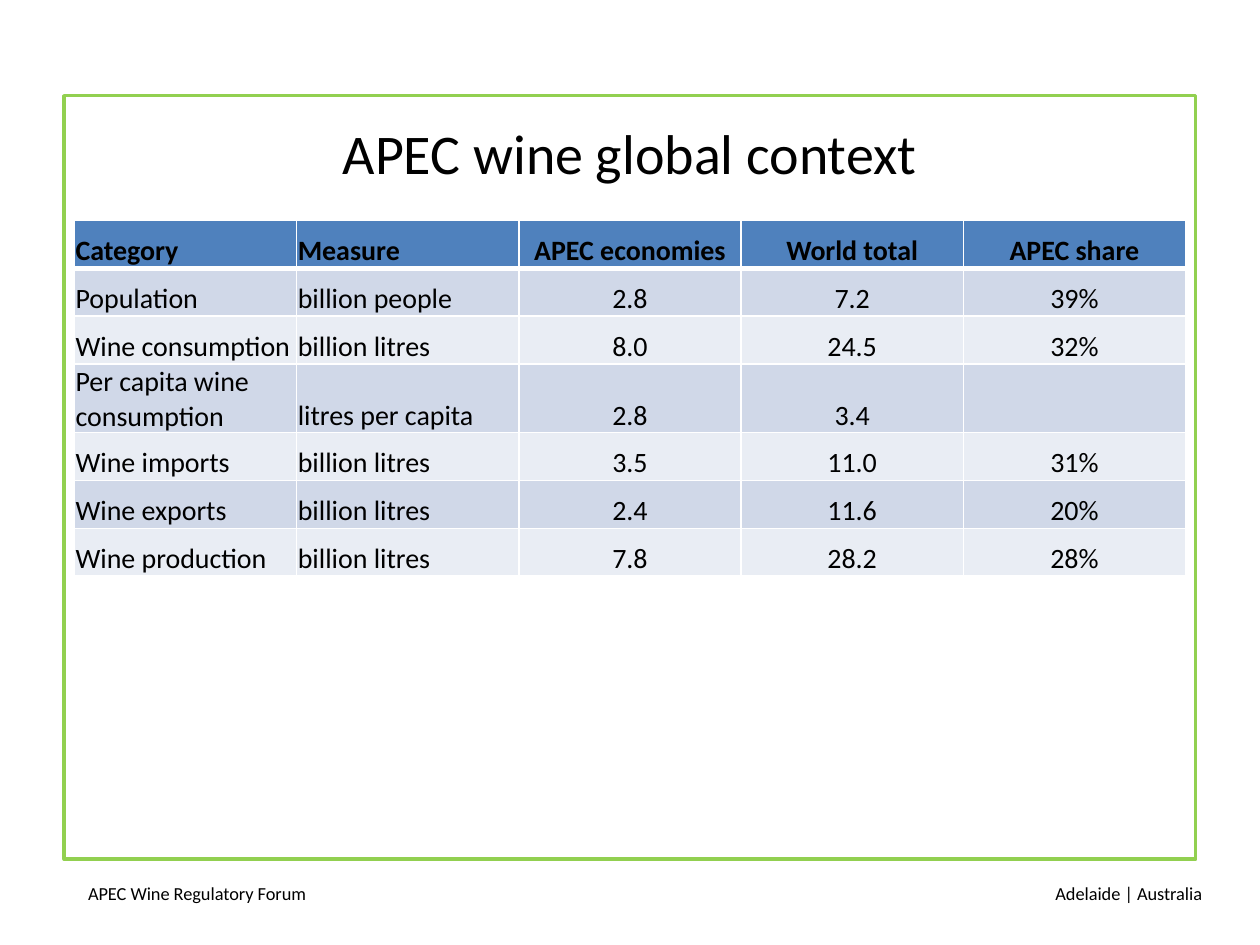
"""Build the APEC wine global context slide."""
from dataclasses import dataclass

from lxml import etree
from pptx import Presentation
from pptx import util as u
from pptx.dml.color import RGBColor
from pptx.enum import shapes, text
from pptx.oxml.ns import qn

TITLE = ("APEC wine global context", (0.5, 0.74, 9, 0.94))
FOOTERS = [
    ("APEC Wine Regulatory Forum", (0.6, 6.95, 2.35, 0.4), text.PP_ALIGN.LEFT),
    ("Adelaide | Australia", (7.29, 6.95, 2.35, 0.4), text.PP_ALIGN.RIGHT),
]
FRAME_BOX = (0.51, 0.76, 8.98, 6.06)
ROWS = [
    ("Category", "Measure", "APEC economies", "World total", "APEC share"),
    ("Population", "billion people", "2.8", "7.2", "39%"),
    ("Wine consumption", "billion litres", "8.0", "24.5", "32%"),
    ("Per capita wine consumption", "litres per capita", "2.8", "3.4", ""),
    ("Wine imports", "billion litres", "3.5", "11.0", "31%"),
    ("Wine exports", "billion litres", "2.4", "11.6", "20%"),
    ("Wine production", "billion litres", "7.8", "28.2", "28%"),
]
TABLE_BOX = (0.59, 1.75, 8.82, 2.82)
ROW_HEIGHT, TALL_ROW_HEIGHT, TALL_ROW = 0.38, 0.51, 3
LABEL_COLUMNS = 2


@dataclass(frozen=True)
class Theme:
    font: str = "Calibri"
    ink: str = "000000"
    frame: str = "92D050"
    header: str = "4F81BD"
    bands: tuple = ("D0D8E8", "E9EDF4")
    border: str = "FFFFFF"
    title_size: float = 32
    table_size: float = 16
    footer_size: float = 10.5


THEME = Theme()


def inches(box):
    return [u.Inches(value) for value in box]


def write(frame, words, size, align, bold=False):
    paragraph = frame.paragraphs[0]
    paragraph.text = words
    paragraph.alignment = align
    font = paragraph.font
    font.name, font.size, font.bold = THEME.font, u.Pt(size), bold
    font.color.rgb = RGBColor.from_string(THEME.ink)


def add_text(slide, words, box, size, align, anchor=text.MSO_ANCHOR.TOP):
    frame = slide.shapes.add_textbox(*inches(box)).text_frame
    frame.word_wrap = True
    frame.vertical_anchor = anchor
    write(frame, words, size, align)


def add_frame(slide):
    shape = slide.shapes.add_shape(shapes.MSO_SHAPE.RECTANGLE, *inches(FRAME_BOX))
    shape.shadow.inherit = False
    shape.fill.background()
    shape.line.color.rgb = RGBColor.from_string(THEME.frame)
    shape.line.width = u.Pt(2)


def set_borders(cell, row):
    widths = {"L": 1, "R": 1, "T": 3 if row == 1 else 1, "B": 3 if row == 0 else 1}
    properties = cell._tc.get_or_add_tcPr()
    for side, width in widths.items():
        line = etree.SubElement(properties, qn(f"a:ln{side}"), w=str(u.Pt(width)))
        fill = etree.SubElement(line, qn("a:solidFill"))
        etree.SubElement(fill, qn("a:srgbClr"), val=THEME.border)


def style_cell(cell, words, row, column):
    header = row == 0
    align = text.PP_ALIGN.LEFT if column < LABEL_COLUMNS else text.PP_ALIGN.CENTER
    write(cell.text_frame, words, THEME.table_size, align, bold=header)
    cell.vertical_anchor = text.MSO_ANCHOR.BOTTOM
    cell.margin_left = cell.margin_right = cell.margin_top = u.Inches(0.01)
    cell.margin_bottom = 0
    set_borders(cell, row)
    color = THEME.header if header else THEME.bands[(row - 1) % 2]
    cell.fill.solid()
    cell.fill.fore_color.rgb = RGBColor.from_string(color)


def add_wine_table(slide):
    table = slide.shapes.add_table(len(ROWS), len(ROWS[0]), *inches(TABLE_BOX)).table
    for row, values in enumerate(ROWS):
        height = TALL_ROW_HEIGHT if row == TALL_ROW else ROW_HEIGHT
        table.rows[row].height = u.Inches(height)
        for column, words in enumerate(values):
            style_cell(table.cell(row, column), words, row, column)


def main():
    presentation = Presentation()
    presentation.slide_width, presentation.slide_height = inches((10, 7.5))
    slide = presentation.slides.add_slide(presentation.slide_layouts[6])
    add_frame(slide)
    for words, box, align in FOOTERS:
        add_text(slide, words, box, THEME.footer_size, align)
    add_text(slide, *TITLE, THEME.title_size, text.PP_ALIGN.CENTER, text.MSO_ANCHOR.MIDDLE)
    add_wine_table(slide)
    presentation.save("out.pptx")


if __name__ == "__main__":
    main()
